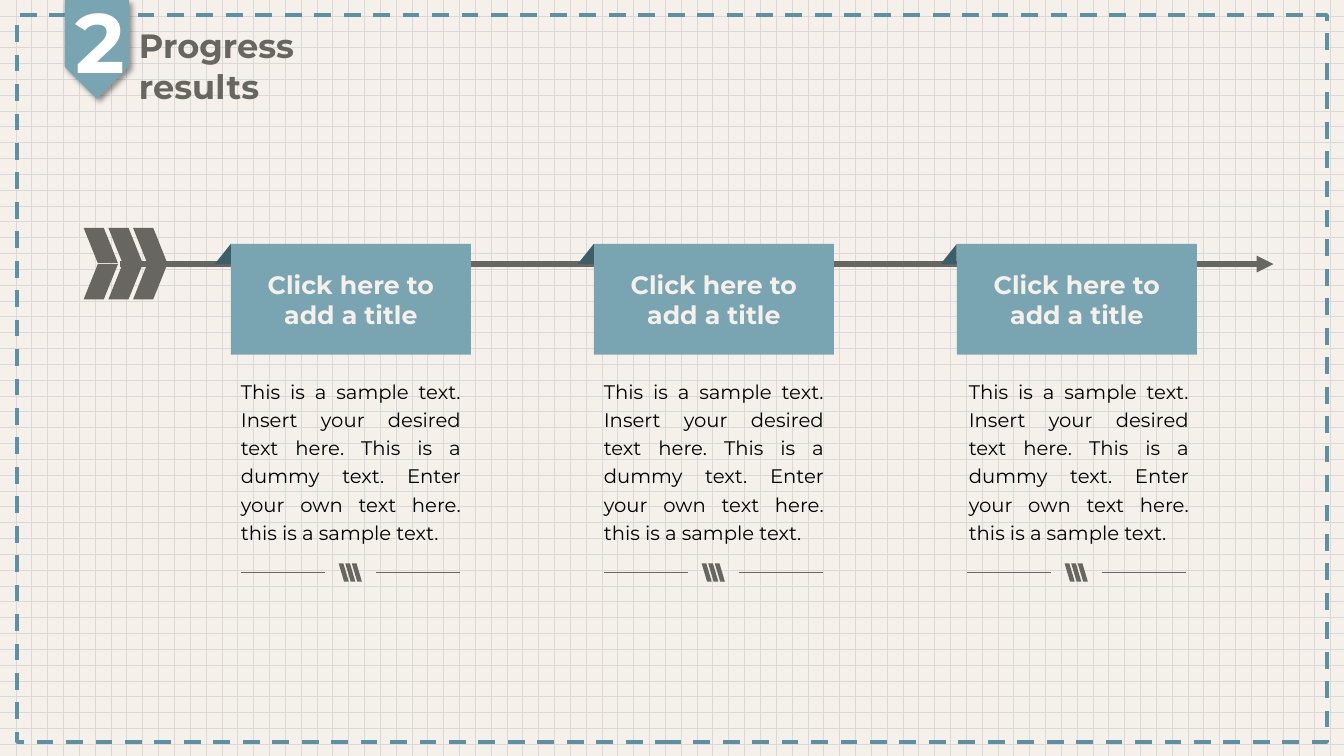
from dataclasses import dataclass

from lxml.etree import SubElement
from pptx import Presentation
from pptx.dml.color import RGBColor
from pptx.enum.dml import MSO_LINE as Dash, MSO_PATTERN as Pattern
from pptx.enum.shapes import MSO_CONNECTOR as Link, MSO_SHAPE as Kind
from pptx.enum.text import MSO_ANCHOR as Anchor, MSO_AUTO_SIZE as Fit, PP_ALIGN as Align
from pptx.oxml.ns import qn
from pptx.util import Inches, Pt

FONT = "Montserrat"
CREAM = RGBColor(0xF5, 0xF0, 0xEA)
GRID = RGBColor(0xD9, 0xD9, 0xD9)
FRAME = RGBColor(0x5D, 0x91, 0xA1)
TEAL = RGBColor(0x79, 0xA5, 0xB2)
DEEP = RGBColor(0x3C, 0x5E, 0x68)
GRAY = RGBColor(0x67, 0x66, 0x61)
BLACK = RGBColor(0, 0, 0)
WHITE = RGBColor(0xFF, 0xFF, 0xFF)

TITLE = "Click here to add a title"
BODY = ("This is a sample text. Insert your desired text here. This is a dummy text. "
        "Enter your own text here. this is a sample text.")
LEFT, PITCH = 2.29, 3.6
AXIS = 2.62  # height of the timeline
RULE = 5.68  # height of the dividers


@dataclass
class Box:
    left: float
    top: float
    width: float
    height: float

    def emu(self) -> list:
        return [Inches(v) for v in (self.left, self.top, self.width, self.height)]


@dataclass
class Step:
    title: str
    body: str
    shift: float = 0  # offset of the body text from its card


STEPS = [Step(TITLE, BODY), Step(TITLE, BODY), Step(TITLE, BODY, 0.02)]


def write(shape, text: str, *, size: float, color: RGBColor, bold: bool = False,
          align: Align = Align.LEFT, anchor: Anchor = Anchor.TOP,
          wrap: bool = True, spacing: float = 1.0) -> None:
    frame = shape.text_frame
    frame.word_wrap = wrap
    frame.vertical_anchor = anchor
    para = frame.paragraphs[0]
    para.alignment = align
    para.line_spacing = spacing
    run = para.add_run()
    run.text = text
    font = run.font
    font.name, font.size, font.bold = FONT, Pt(size), bold
    font.color.rgb = color


def label(slide, box: Box, text: str, **style) -> None:
    shape = slide.shapes.add_textbox(*box.emu())
    write(shape, text, **style)
    shape.text_frame.auto_size = Fit.SHAPE_TO_FIT_TEXT


def solid(parent, kind: Kind, box: Box, color: RGBColor, *,
          adj: float | None = None, flip: bool = False):
    shape = parent.shapes.add_shape(kind, *box.emu())
    shape.shadow.inherit = False
    shape.fill.solid()
    shape.fill.fore_color.rgb = color
    shape.line.fill.background()
    if adj is not None:
        shape.adjustments[0] = adj
    if flip:
        shape._element.spPr.xfrm.set("flipH", "1")
    return shape


def rule(parent, start: float, end: float, y: float, width: float, arrow: bool = False) -> None:
    ends = [Inches(v) for v in (start, y, end, y)]
    line = parent.shapes.add_connector(Link.STRAIGHT, *ends)
    line.line.color.rgb = GRAY
    line.line.width = Pt(width)
    if arrow:
        SubElement(line.line._get_or_add_ln(), qn("a:tailEnd"), type="triangle")
    SubElement(line._element.spPr, qn("a:effectLst"))


def cast(shape) -> None:
    """Give the shape a soft shadow to the lower right."""
    effects = shape._element.spPr.find(qn("a:effectLst"))
    outer = SubElement(effects, qn("a:outerShdw"), blurRad=str(Pt(4)), dist=str(Pt(3)),
                       dir="2700000", algn="tl", rotWithShape="0")
    tint = SubElement(outer, qn("a:srgbClr"), val=str(BLACK))
    SubElement(tint, qn("a:alpha"), val="40000")


def backdrop(slide) -> None:
    fill = slide.background.fill
    fill.patterned()
    fill.pattern = Pattern.DOTTED_GRID
    fill.fore_color.rgb, fill.back_color.rgb = GRID, CREAM
    frame = solid(slide, Kind.RECTANGLE, Box(0.17, 0.15, 12.99, 7.21), FRAME)
    frame.fill.background()
    frame.line.color.rgb = FRAME
    frame.line.width = Pt(3)
    frame.line.dash_style = Dash.DASH


def header(slide) -> None:
    label(slide, Box(1.28, 0.2, 2.88, 0.5), "Progress results", size=24, color=GRAY, bold=True)
    badge = solid(slide, Kind.PENTAGON, Box(0.47, 0.17, 0.98, 0.64), TEAL)
    badge.rotation = 90
    cast(badge)
    label(slide, Box(0.65, -0.15, 0.63, 1.11), "2", size=60, color=WHITE, bold=True, wrap=False)


def timeline(slide) -> None:
    group = slide.shapes.add_group_shape()
    rule(group, 1.19, 12.63, AXIS, 4, arrow=True)
    for top, flip in ((AXIS - 0.36, True), (AXIS, False)):
        for i in range(3):
            solid(group, Kind.PARALLELOGRAM, Box(0.83 + 0.245 * i, top, 0.34, 0.35), GRAY,
                  adj=0.413, flip=flip)


def divider(slide, left: float) -> None:
    group = slide.shapes.add_group_shape()
    for start in (left, left + 1.335):
        rule(group, start, start + 0.835, RULE, 0.5)
    for i in range(3):
        solid(group, Kind.PARALLELOGRAM, Box(left + 0.97 + 0.065 * i, RULE - 0.09, 0.1, 0.18),
              GRAY, adj=0.532, flip=True)


def column(slide, step: Step, left: float) -> None:
    card = solid(slide, Kind.RECTANGLE, Box(left, 2.42, 2.38, 1.1), TEAL)
    write(card, step.title, size=18, color=CREAM, bold=True,
          align=Align.CENTER, anchor=Anchor.MIDDLE)
    solid(slide, Kind.ISOSCELES_TRIANGLE, Box(left - 0.16, 2.42, 0.16, 0.2), DEEP,
          adj=0, flip=True)
    label(slide, Box(left + step.shift, 3.67, 2.38, 1.51), step.body, size=14, color=BLACK,
          align=Align.JUSTIFY, spacing=1.2)
    divider(slide, left + 0.1)


def main() -> None:
    deck = Presentation()
    deck.slide_width, deck.slide_height = Inches(13.33), Inches(7.5)
    slide = deck.slides.add_slide(deck.slide_layouts[6])
    backdrop(slide)
    header(slide)
    timeline(slide)
    for i, step in enumerate(STEPS):
        column(slide, step, LEFT + PITCH * i)
    deck.save("out.pptx")


if __name__ == "__main__":
    main()
